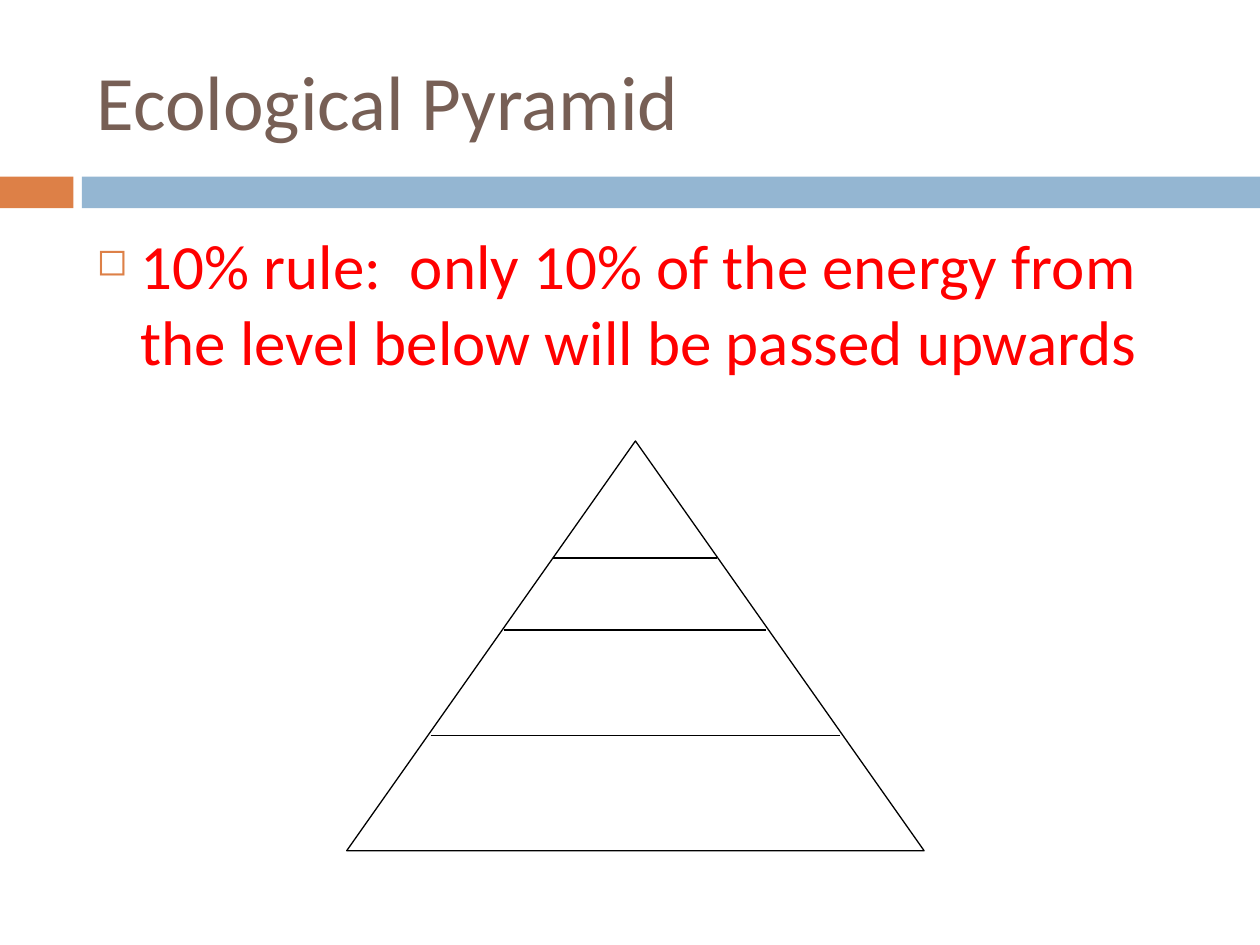
from lxml import etree
from pptx import Presentation
from pptx.dml.color import RGBColor
from pptx.enum.shapes import MSO_CONNECTOR, MSO_SHAPE
from pptx.enum.text import MSO_ANCHOR
from pptx.oxml.ns import qn
from pptx.util import Cm, Pt

RECTANGLE = MSO_SHAPE.RECTANGLE
TRIANGLE = MSO_SHAPE.ISOSCELES_TRIANGLE
STRAIGHT = MSO_CONNECTOR.STRAIGHT
TOP, MIDDLE = MSO_ANCHOR.TOP, MSO_ANCHOR.MIDDLE
ORANGE, BLUE, BROWN = "DD8047", "94B6D2", "775F55"
RED, BLACK, WHITE = "FF0000", "000000", "FFFFFF"


def color(hex_value):
    return RGBColor.from_string(hex_value)


def add_text(top, height, anchor, text, size, hex_value):
    box = slide.shapes.add_textbox(Cm(1.7), Cm(top), Cm(22.66), Cm(height))
    frame = box.text_frame
    frame.word_wrap = True
    frame.vertical_anchor = anchor
    paragraph = frame.paragraphs[0]
    run = paragraph.add_run()
    run.text = text
    run.font.name = "Calibri"
    run.font.size = Pt(size)
    run.font.color.rgb = color(hex_value)
    return paragraph


prs = Presentation()
prs.slide_width, prs.slide_height = Cm(25.4), Cm(19.05)
slide = prs.slides.add_slide(prs.slide_layouts[6])

# Two-part band under the title
for left, width, fill in [(0, 1.48, ORANGE), (1.65, 23.75, BLUE)]:
    band = slide.shapes.add_shape(RECTANGLE, Cm(left), Cm(3.56), Cm(width), Cm(0.64))
    band.shadow.inherit = False
    band.fill.solid()
    band.fill.fore_color.rgb = color(fill)
    band.line.fill.background()

# Title and the bulleted rule
add_text(0.64, 2.75, MIDDLE, "Ecological Pyramid", 44, BROWN)
rule = add_text(
    4.45, 12.5, TOP,
    "10% rule:  only 10% of the energy from the level below will be passed upwards",
    36, RED)
rule.space_before = Pt(7)
properties = rule._p.get_or_add_pPr()
properties.set("marL", str(Cm(0.89)))
properties.set("indent", str(Cm(-0.89)))
bullet_color = etree.SubElement(properties, qn("a:buClr"))
etree.SubElement(bullet_color, qn("a:srgbClr"), val=ORANGE)
etree.SubElement(properties, qn("a:buSzPct"), val="60000")
etree.SubElement(properties, qn("a:buChar"), char="◻")

# Pyramid outline
pyramid = slide.shapes.add_group_shape()
outline = pyramid.shapes.add_shape(TRIANGLE, Cm(6.99), Cm(8.89), Cm(11.64), Cm(8.26))
outline.shadow.inherit = False
outline.fill.solid()
outline.fill.fore_color.rgb = color(WHITE)
outline.line.color.rgb = color(BLACK)
outline.line.width = Pt(0.75)

# Dividers between the levels: left, right, height on the slide
for left, right, y in [(11.15, 14.46, 11.25), (8.68, 16.93, 14.82), (10.16, 15.45, 12.7)]:
    divider = pyramid.shapes.add_connector(STRAIGHT, Cm(left), Cm(y), Cm(right), Cm(y))
    divider.line.color.rgb = color(BLACK)
    divider.line.width = Pt(0.75)
    etree.SubElement(divider._element.spPr, qn("a:effectLst"))

prs.save("out.pptx")
